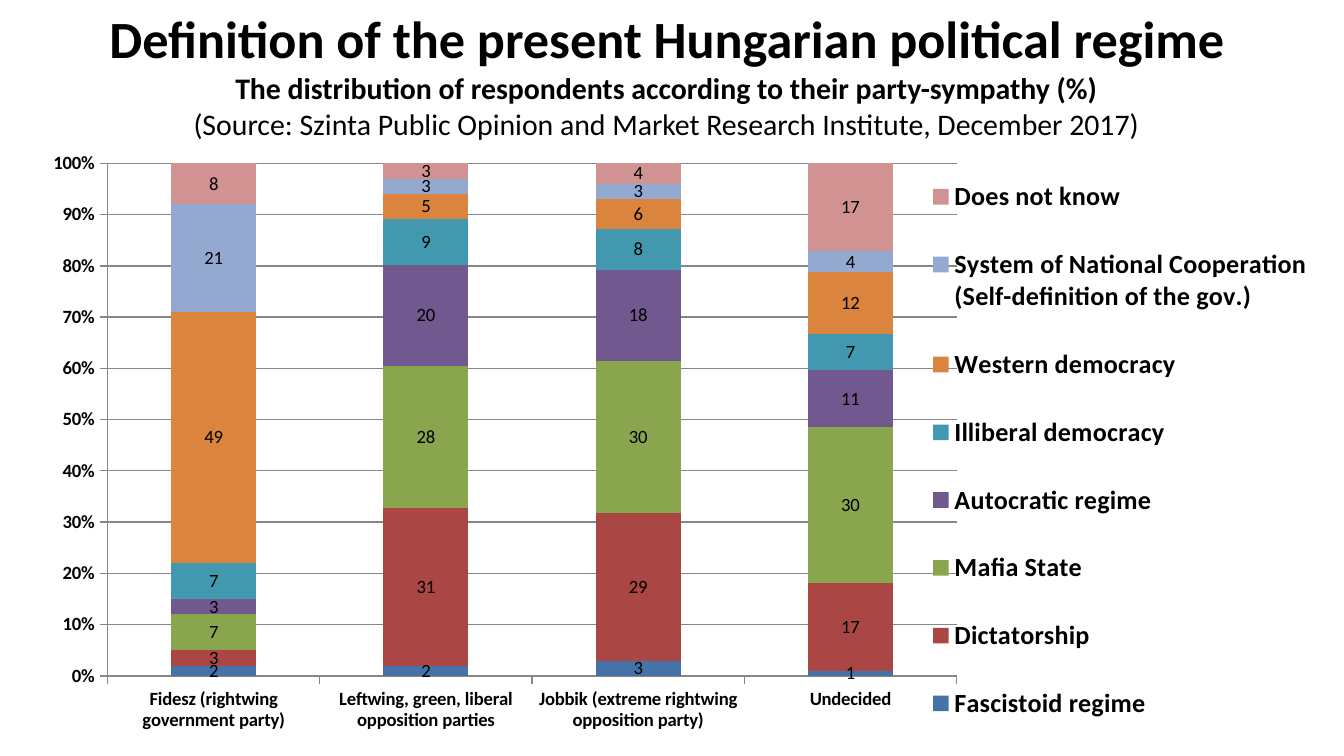
from lxml import etree
from pptx import Presentation
from pptx.chart.data import CategoryChartData
from pptx.dml.color import RGBColor
from pptx.enum.chart import XL_CHART_TYPE as ChartType
from pptx.enum.chart import XL_LABEL_POSITION as LabelPosition
from pptx.enum.chart import XL_LEGEND_POSITION as LegendPosition
from pptx.enum.chart import XL_TICK_MARK as TickMark
from pptx.enum.text import MSO_AUTO_SIZE as AutoSize
from pptx.enum.text import PP_ALIGN as Align
from pptx.oxml.ns import qn
from pptx.util import Inches, Pt

FONT = "Calibri"
BLACK = RGBColor(0x00, 0x00, 0x00)
GRAY = RGBColor(0x86, 0x86, 0x86)
BLUE = RGBColor(0x45, 0x72, 0xA7)
RED = RGBColor(0xAA, 0x46, 0x43)
GREEN = RGBColor(0x89, 0xA5, 0x4E)
PURPLE = RGBColor(0x71, 0x58, 0x8F)
TEAL = RGBColor(0x41, 0x98, 0xAF)
ORANGE = RGBColor(0xDB, 0x84, 0x3D)
LIGHT_BLUE = RGBColor(0x93, 0xA9, 0xCF)
PINK = RGBColor(0xD1, 0x93, 0x92)

PARTIES = [
    "Fidesz (rightwing government party)",
    "Leftwing, green, liberal opposition parties",
    "Jobbik (extreme rightwing opposition party)",
    "Undecided",
]
REGIMES = [
    ("Fascistoid regime", (2, 2, 3, 1), BLUE),
    ("Dictatorship", (3, 31, 29, 17), RED),
    ("Mafia State", (7, 28, 30, 30), GREEN),
    ("Autocratic regime", (3, 20, 18, 11), PURPLE),
    ("Illiberal democracy", (7, 9, 8, 7), TEAL),
    ("Western democracy", (49, 5, 6, 12), ORANGE),
    ("System of National Cooperation (Self-definition of the gov.)", (21, 3, 3, 4), LIGHT_BLUE),
    ("Does not know", (8, 3, 4, 17), PINK),
]
HEADING = [
    ("Definition of the present Hungarian political regime", 28, True),
    ("The distribution of respondents according to their party-sympathy (%)", 16, True),
    ("(Source: Szinta Public Opinion and Market Research Institute, December 2017)", 16, False),
]


def style_font(font, size, bold):
    font.name = FONT
    font.size = Pt(size)
    font.bold = bold
    font.color.rgb = BLACK


def place(parent, index, settings):
    for layout in parent.findall(qn("c:layout")):
        parent.remove(layout)
    layout = etree.Element(qn("c:layout"))
    manual = etree.SubElement(layout, qn("c:manualLayout"))
    for tag, value in settings:
        etree.SubElement(manual, qn("c:" + tag)).set("val", str(value))
    parent.insert(index, layout)


presentation = Presentation()
presentation.slide_width = Inches(10)
presentation.slide_height = Inches(10) * 9 // 16
slide = presentation.slides.add_slide(presentation.slide_layouts[6])

chart_data = CategoryChartData()
chart_data.categories = PARTIES
for name, values, color in REGIMES:
    chart_data.add_series(name, values)
chart = slide.shapes.add_chart(
    ChartType.COLUMN_STACKED_100,
    Inches(0.12), Inches(1.08), Inches(9.72), Inches(4.54),
    chart_data,
).chart
chart.has_title = False
style_font(chart.font, 10, False)

plot = chart.plots[0]
plot.gap_width = 150
plot.overlap = 100
plot.vary_by_categories = False
for series, (name, values, color) in zip(plot.series, REGIMES):
    series.format.fill.solid()
    series.format.fill.fore_color.rgb = color
    labels = series.data_labels
    labels.show_value = True
    labels.position = LabelPosition.CENTER
    style_font(labels.font, 10, False)

for axis in (chart.category_axis, chart.value_axis):
    axis.major_tick_mark = TickMark.OUTSIDE
    axis.minor_tick_mark = TickMark.NONE
    axis.format.line.color.rgb = GRAY
    style_font(axis.tick_labels.font, 10, True)
chart.value_axis.tick_labels.number_format = "0%"
chart.value_axis.tick_labels.number_format_is_linked = False
chart.value_axis.has_major_gridlines = True
chart.value_axis.major_gridlines.format.line.color.rgb = GRAY

chart.has_legend = True
legend = chart.legend
legend.position = LegendPosition.RIGHT
legend.include_in_layout = False
style_font(legend.font, 14, True)

edges = [("xMode", "edge"), ("yMode", "edge")]
plot_area = chart.element.find(".//" + qn("c:plotArea"))
legend_element = chart.element.find(".//" + qn("c:legend"))
place(plot_area, 0, [("layoutTarget", "inner")] + edges
      + [("x", 0.07), ("y", 0.03), ("w", 0.65), ("h", 0.84)])
place(legend_element, 1, edges + [("x", 0.69), ("y", 0), ("w", 0.31), ("h", 1)])

heading = slide.shapes.add_textbox(Inches(0.59), Inches(0), Inches(8.74), Inches(1.11))
text_frame = heading.text_frame
text_frame.word_wrap = True
text_frame.auto_size = AutoSize.SHAPE_TO_FIT_TEXT
text_frame.text = "\n".join(text for text, size, bold in HEADING)
for paragraph, (text, size, bold) in zip(text_frame.paragraphs, HEADING):
    paragraph.alignment = Align.CENTER
    style_font(paragraph.runs[0].font, size, bold)

presentation.save("out.pptx")
